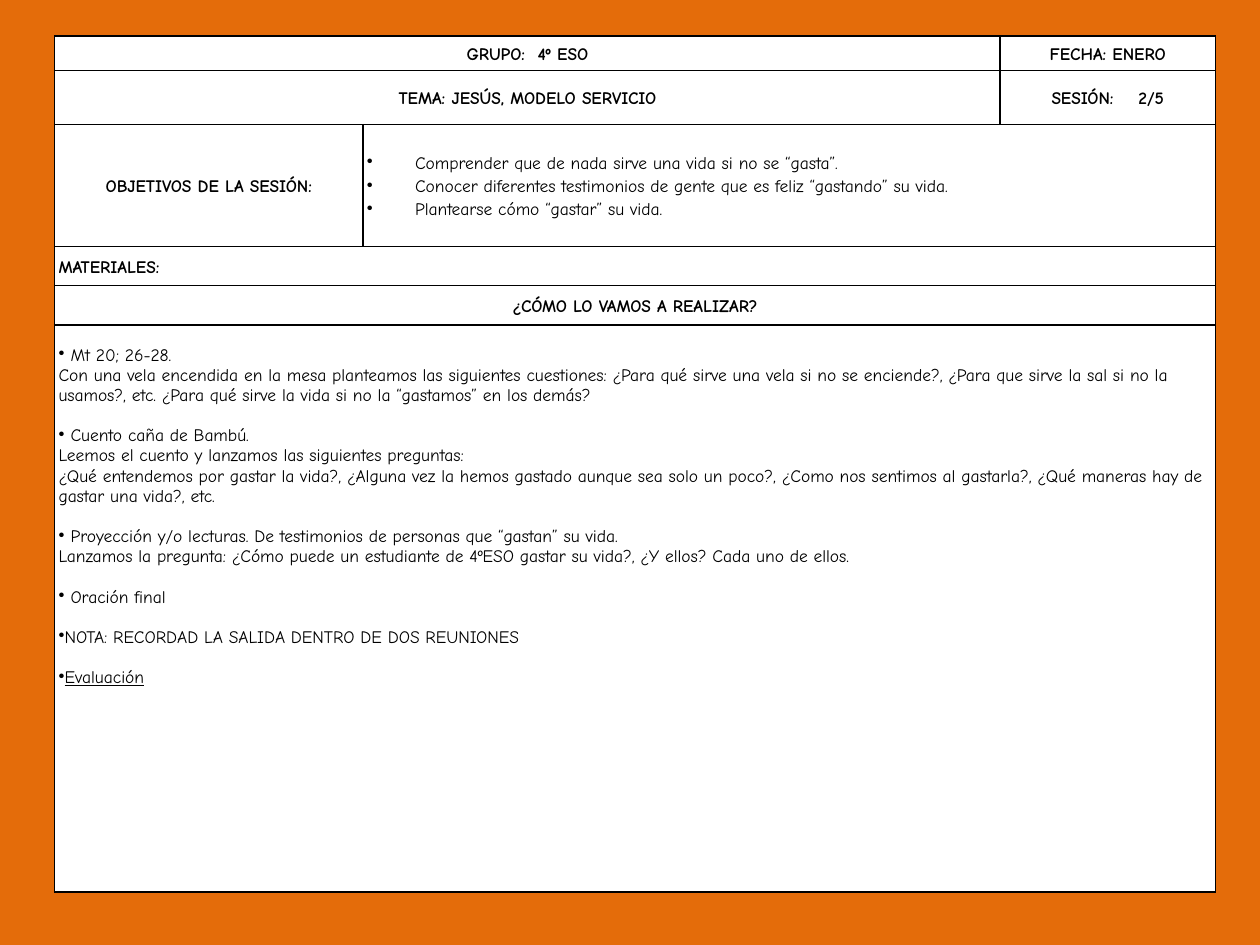
from lxml import etree
from pptx import Presentation
from pptx import util as u
from pptx.dml.color import RGBColor
from pptx.enum import text
from pptx.oxml import ns

FONT = "Comic Neue"
CENTER = text.PP_ALIGN.CENTER
LEFT = text.PP_ALIGN.LEFT
COLUMN_SHARES = (6.22, 12.85, 4.34)
ROW_SHARES = (0.69, 1.09, 2.46, 0.79, 0.79, 11.43)
OBJECTIVES = (
    "Comprender que de nada sirve una vida si no se “gasta”.",
    "Conocer diferentes testimonios de gente que es feliz “gastando” su vida.",
    "Plantearse cómo “gastar” su vida.",
)
ACTIVITIES = (
    (" Mt 20; 26-28.",
     "Con una vela encendida en la mesa planteamos las siguientes cuestiones: "
     "¿Para qué sirve una vela si no se enciende?, ¿Para que sirve la sal si no la usamos?, etc. "
     "¿Para qué sirve la vida si no la “gastamos” en los demás?"),
    (" Cuento caña de Bambú.",
     "Leemos el cuento y lanzamos las siguientes preguntas:",
     "¿Qué entendemos por gastar la vida?, ¿Alguna vez la hemos gastado aunque sea solo un poco?, "
     "¿Como nos sentimos al gastarla?, ¿Qué maneras hay de gastar una vida?, etc."),
    (" Proyección y/o lecturas. De testimonios de personas que “gastan” su vida.",
     "Lanzamos la pregunta: ¿Cómo puede un estudiante de 4ºESO gastar su vida?, "
     "¿Y ellos? Cada uno de ellos."),
    (" Oración final",),
    ("NOTA: RECORDAD LA SALIDA DENTRO DE DOS REUNIONES",),
    ("Evaluación",),
)


def color(value):
    return RGBColor.from_string(value)


def add_bullet(paragraph, indent=0):
    properties = paragraph._p.get_or_add_pPr()
    properties.set("marL", str(int(indent)))
    properties.set("indent", str(-int(indent)))
    etree.SubElement(properties, ns.qn("a:buChar")).set("char", "•")


def format_paragraph(paragraph, align=LEFT, bold=False, spacing=1.15):
    paragraph.alignment = align
    paragraph.line_spacing = spacing
    for run in paragraph.runs:
        run.font.name = FONT
        run.font.size = u.Pt(10)
        run.font.bold = bold
        run.font.color.rgb = color("000000")


def format_cell(cell):
    cell.fill.solid()
    cell.fill.fore_color.rgb = color("FFFFFF")
    cell.vertical_anchor = text.MSO_ANCHOR.MIDDLE
    cell.margin_left = cell.margin_right = u.Cm(0.08)
    cell.margin_top = cell.margin_bottom = 0
    properties = cell._tc.get_or_add_tcPr()
    for position, side in enumerate(("lnL", "lnR", "lnT", "lnB")):
        border = etree.Element(ns.qn(f"a:{side}"), w=str(int(u.Pt(1))))
        fill = etree.SubElement(border, ns.qn("a:solidFill"))
        etree.SubElement(fill, ns.qn("a:srgbClr")).set("val", "000000")
        properties.insert(position, border)


def write_label(cell, label, align=CENTER):
    cell.text_frame.text = label
    format_paragraph(cell.text_frame.paragraphs[0], align, bold=True)


def write_objectives(cell):
    cell.text_frame.text = "\n".join(OBJECTIVES)
    for paragraph in cell.text_frame.paragraphs:
        format_paragraph(paragraph)
        add_bullet(paragraph, u.Cm(0.97))


def write_activities(cell):
    cell.vertical_anchor = text.MSO_ANCHOR.TOP
    cell.margin_top = u.Cm(0.41)
    cell.text_frame.text = "\n".join(line for activity in ACTIVITIES for line in activity)
    paragraphs = iter(cell.text_frame.paragraphs)
    for number, activity in enumerate(ACTIVITIES):
        for line_number, paragraph in zip(range(len(activity)), paragraphs):
            format_paragraph(paragraph, spacing=1.0)
            if line_number == 0:
                paragraph.space_before = u.Pt(11.5 if number else 0)
                add_bullet(paragraph)
    cell.text_frame.paragraphs[-1].runs[0].font.underline = True


def add_session_plan(slide, left, top, width, height):
    plan = slide.shapes.add_table(
        len(ROW_SHARES), len(COLUMN_SHARES), left, top, width, height).table
    plan.first_row = plan.horz_banding = False
    for column, share in zip(plan.columns, COLUMN_SHARES):
        column.width = int(width * share / sum(COLUMN_SHARES))
    for row, share in zip(plan.rows, ROW_SHARES):
        row.height = int(height * share / sum(ROW_SHARES))
    for cell in plan.iter_cells():
        format_cell(cell)
    for row, first, last in ((0, 0, 1), (1, 0, 1), (2, 1, 2), (3, 0, 2), (4, 0, 2), (5, 0, 2)):
        plan.cell(row, first).merge(plan.cell(row, last))

    write_label(plan.cell(0, 0), "GRUPO:  4º ESO")
    write_label(plan.cell(0, 2), "FECHA: ENERO")
    write_label(plan.cell(1, 0), "TEMA: JESÚS, MODELO SERVICIO")
    write_label(plan.cell(1, 2), "SESIÓN:    2/5")
    write_label(plan.cell(2, 0), "OBJETIVOS DE LA SESIÓN:")
    write_objectives(plan.cell(2, 1))
    write_label(plan.cell(3, 0), "MATERIALES:", LEFT)
    write_label(plan.cell(4, 0), "¿CÓMO LO VAMOS A REALIZAR?")
    write_activities(plan.cell(5, 0))


def main():
    deck = Presentation()
    deck.slide_width, deck.slide_height = u.Cm(25.4), u.Cm(19.05)
    slide = deck.slides.add_slide(deck.slide_layouts[6])
    slide.background.fill.solid()
    slide.background.fill.fore_color.rgb = color("E46C0A")
    add_session_plan(slide, u.Cm(1.1), u.Cm(0.73), u.Cm(23.4), u.Cm(17.25))
    deck.save("out.pptx")


if __name__ == "__main__":
    main()
